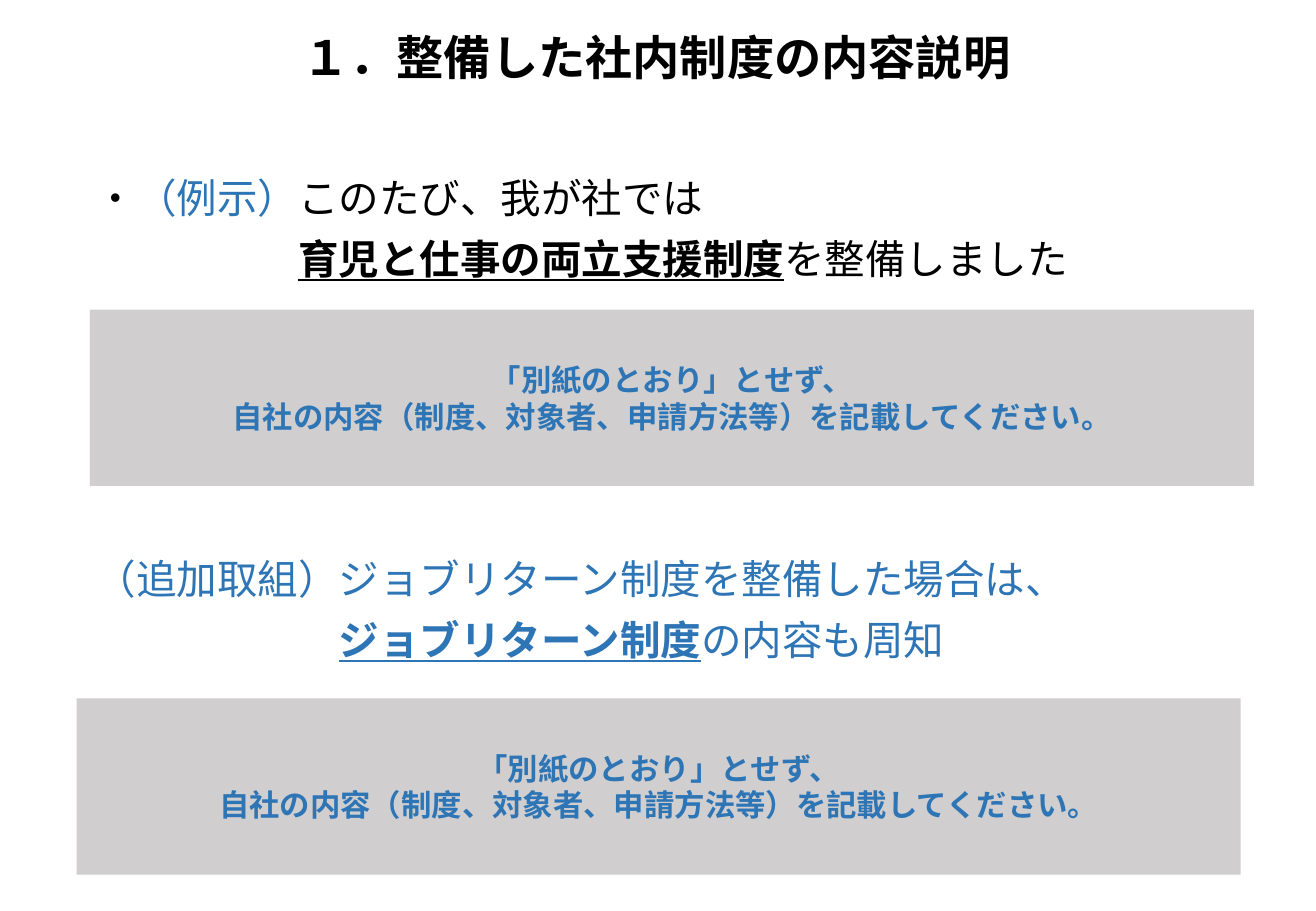
"""Build the slide that explains the in-house support systems."""
from pptx import Presentation
from pptx.dml.color import RGBColor
from pptx.enum.shapes import MSO_SHAPE
from pptx.enum.text import MSO_ANCHOR, PP_ALIGN
from pptx.util import Inches, Pt

COLOURS = {"black": "000000", "blue": "2E75B6", "grey": "D0CECE"}

TITLE_FORMAT = {"size": Pt(28), "name": "Arial", "bold": True}
BODY_FORMAT = {"size": Pt(24), "name": "Calibri"}
KEY_FORMAT = {**BODY_FORMAT, "bold": True, "underline": True}
NOTE_FORMAT = {"size": Pt(18), "name": "Calibri", "bold": True}

HEADING_LAYOUT = {"line_spacing": 0.9}
BODY_LAYOUT = {"line_spacing": 0.9, "space_before": Pt(10)}
NOTE_LAYOUT = {"alignment": PP_ALIGN.CENTER}

TITLE = [(0, [("１．整備した社内制度の内容説明", "black", TITLE_FORMAT)])]
EXAMPLE = [
    (0, [("・", "black", BODY_FORMAT), ("（例示）", "blue", BODY_FORMAT),
         ("このたび、我が社では", "black", BODY_FORMAT)]),
    (5, [("育児と仕事の両立支援制度", "black", KEY_FORMAT),
         ("を整備しました", "black", BODY_FORMAT)]),
]
ADDITION = [
    (0, [("（追加取組）ジョブリターン制度を整備した場合は、", "blue", BODY_FORMAT)]),
    (6, [("ジョブリターン制度", "blue", KEY_FORMAT),
         ("の内容も周知", "blue", BODY_FORMAT)]),
]
NOTE = [
    (0, [("「別紙のとおり」とせず、", "blue", NOTE_FORMAT)]),
    (0, [("自社の内容（制度、対象者、申請方法等）を記載してください。", "blue", NOTE_FORMAT)]),
]

TEXT_BOXES = [
    (TITLE, (2.39, 0.23, 6.09, 0.53), MSO_ANCHOR.MIDDLE, HEADING_LAYOUT),
    (ADDITION, (0.69, 4.56, 8.28, 0.97), MSO_ANCHOR.TOP, BODY_LAYOUT),
    (EXAMPLE, (0.69, 1.42, 8.28, 0.97), MSO_ANCHOR.TOP, BODY_LAYOUT),
]
NOTE_POSITIONS = [(0.74, 2.55), (0.63, 5.75)]
NOTE_SIZE = (9.58, 1.45)


def set_attributes(target, values):
    """Set each named attribute of the target."""
    for name, value in values.items():
        setattr(target, name, value)


def write_text(shape, lines, anchor, layout):
    """Fill a shape with lines, each indented by a number of characters."""
    frame = shape.text_frame
    set_attributes(frame, {"word_wrap": True, "vertical_anchor": anchor})
    for index, (indent, runs) in enumerate(lines):
        paragraph = frame.add_paragraph() if index else frame.paragraphs[0]
        set_attributes(paragraph, layout)
        if indent:
            margin = indent * BODY_FORMAT["size"]
            paragraph._p.get_or_add_pPr().set("marL", str(margin))
        for text, colour, text_format in runs:
            run = paragraph.add_run()
            run.text = text
            set_attributes(run.font, text_format)
            run.font.color.rgb = RGBColor.from_string(COLOURS[colour])


def main():
    """Create the presentation and save it."""
    presentation = Presentation()
    presentation.slide_width = Inches(10.83)
    presentation.slide_height = Inches(7.5)
    slide = presentation.slides.add_slide(presentation.slide_layouts[6])

    for lines, place, anchor, layout in TEXT_BOXES:
        text_box = slide.shapes.add_textbox(*map(Inches, place))
        write_text(text_box, lines, anchor, layout)

    for position in NOTE_POSITIONS:
        panel = slide.shapes.add_shape(
            MSO_SHAPE.RECTANGLE, *map(Inches, position + NOTE_SIZE))
        panel.shadow.inherit = False
        panel.fill.solid()
        panel.fill.fore_color.rgb = RGBColor.from_string(COLOURS["grey"])
        panel.line.fill.background()
        write_text(panel, NOTE, MSO_ANCHOR.MIDDLE, NOTE_LAYOUT)

    presentation.save("out.pptx")


if __name__ == "__main__":
    main()
